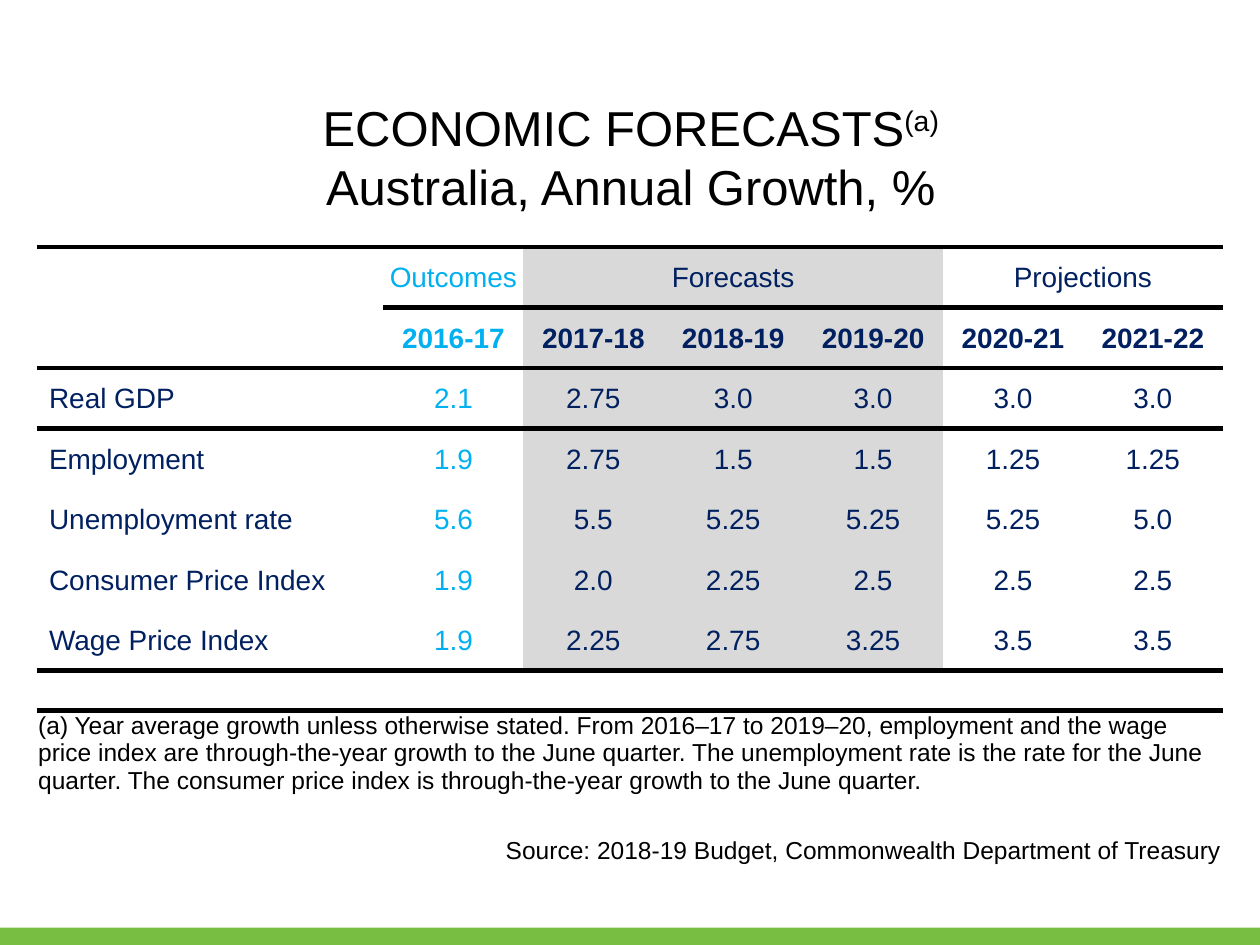
from dataclasses import dataclass

from lxml import etree
from pptx import Presentation
from pptx import util as u
from pptx.dml.color import RGBColor
from pptx.enum import shapes, text
from pptx.oxml import ns

BLACK = RGBColor(0x00, 0x00, 0x00)
WHITE = RGBColor(0xFF, 0xFF, 0xFF)
NAVY = RGBColor(0x00, 0x20, 0x60)
SKY = RGBColor(0x00, 0xB0, 0xF0)
GREY = RGBColor(0xD9, 0xD9, 0xD9)
GREEN = RGBColor(0x77, 0xBE, 0x43)

LEFT, CENTER, RIGHT = text.PP_ALIGN.LEFT, text.PP_ALIGN.CENTER, text.PP_ALIGN.RIGHT
TOP, MIDDLE, BOTTOM = (text.MSO_ANCHOR.TOP, text.MSO_ANCHOR.MIDDLE,
                       text.MSO_ANCHOR.BOTTOM)
PLAIN_STYLE = "{2D5ABB26-0587-4C30-8999-92F81FD0307C}"


@dataclass
class Group:
    """A run of year columns under one heading."""
    name: str
    years: list[str]
    color: RGBColor
    fill: RGBColor


@dataclass
class Series:
    name: str
    values: list[str]


GROUPS = [
    Group("Outcomes", ["2016-17"], SKY, WHITE),
    Group("Forecasts", ["2017-18", "2018-19", "2019-20"], NAVY, GREY),
    Group("Projections", ["2020-21", "2021-22"], NAVY, WHITE),
]
SERIES = [
    Series("Real GDP", ["2.1", "2.75", "3.0", "3.0", "3.0", "3.0"]),
    Series("Employment", ["1.9", "2.75", "1.5", "1.5", "1.25", "1.25"]),
    Series("Unemployment rate", ["5.6", "5.5", "5.25", "5.25", "5.25", "5.0"]),
    Series("Consumer Price Index", ["1.9", "2.0", "2.25", "2.5", "2.5", "2.5"]),
    Series("Wage Price Index", ["1.9", "2.25", "2.75", "3.25", "3.5", "3.5"]),
]
NOTE = ("(a) Year average growth unless otherwise stated. From 2016–17 to 2019–20, "
        "employment and the wage price index are through-the-year growth to the June "
        "quarter. The unemployment rate is the rate for the June quarter. The consumer "
        "price index is through-the-year growth to the June quarter.")
SOURCE = "Source: 2018-19 Budget, Commonwealth Department of Treasury"

HEADS = 2
GAP = HEADS + len(SERIES)
WIDTHS = [6.99] + [2.82] * 6
HEIGHTS = [1.22] * GAP + [0.74, 1.88, 1.22]


def write(para, words: str, size=16, color=NAVY, bold=False, align=CENTER, raised=False):
    """Add one formatted run to a paragraph."""
    para.alignment = align
    run = para.add_run()
    run.text = words
    font = run.font
    font.name, font.size, font.bold = "Arial", u.Pt(size), bold
    font.color.rgb = color
    if raised:
        font._element.set("baseline", "30000")


def put(cell, words: str, anchor=MIDDLE, indent=0.03, **style) -> None:
    cell.margin_left = u.Cm(indent)
    cell.vertical_anchor = anchor
    write(cell.text_frame.paragraphs[0], words, **style)


def edge(cell, side: str) -> None:
    """Draw a black border on the top (T) or bottom (B) of a cell."""
    props = cell._tc.get_or_add_tcPr()
    line = etree.Element(ns.qn(f"a:ln{side}"), w=str(u.Pt(3)))
    fill = etree.SubElement(line, ns.qn("a:solidFill"))
    etree.SubElement(fill, ns.qn("a:srgbClr"), val=str(BLACK))
    props.insert(len(props.findall(ns.qn("a:lnT"))), line)


def rule(table, row: int, first: int = 0) -> None:
    """Draw the line above a row, from column first to the right."""
    for col in range(first, len(WIDTHS)):
        edge(table.cell(row, col), "T")
        if row:
            edge(table.cell(row - 1, col), "B")


def grid(slide):
    """Add the plain table with its sizes, margins and fills."""
    frame = slide.shapes.add_table(len(HEIGHTS), len(WIDTHS), u.Cm(0.74), u.Cm(4.98),
                                   u.Cm(sum(WIDTHS)), u.Cm(sum(HEIGHTS)))
    table = frame.table
    table.first_row = table.horz_banding = False
    table._tbl.tblPr.find(ns.qn("a:tableStyleId")).text = PLAIN_STYLE
    for col, width in zip(table.columns, WIDTHS):
        col.width = u.Cm(width)
    for row, height in zip(table.rows, HEIGHTS):
        row.height = u.Cm(height)
    for cell in table.iter_cells():
        cell.margin_left = cell.margin_right = cell.margin_top = u.Cm(0.03)
        cell.margin_bottom = 0
        cell.fill.solid()
        cell.fill.fore_color.rgb = WHITE
    for cell in table.rows[GAP].cells:
        cell.fill.background()
    return table


def fill_in(table) -> None:
    # Group headings, years and values
    col = 1
    for group in GROUPS:
        last = col + len(group.years) - 1
        head = table.cell(0, col)
        if last > col:
            head.merge(table.cell(0, last))
        put(head, group.name, color=group.color)
        for year in group.years:
            put(table.cell(1, col), year, color=group.color, bold=True)
            for row, series in enumerate(SERIES, HEADS):
                put(table.cell(row, col), series.values[col - 1], color=group.color)
            for row in range(GAP):
                table.cell(row, col).fill.fore_color.rgb = group.fill
            col += 1

    # Row names
    for row, series in enumerate(SERIES, HEADS):
        put(table.cell(row, 0), series.name, indent=0.25, align=LEFT)

    # Note and source
    end = len(WIDTHS) - 1
    note, source = table.cell(GAP + 1, 0), table.cell(GAP + 2, 1)
    note.merge(table.cell(GAP + 1, end))
    source.merge(table.cell(GAP + 2, end))
    put(note, NOTE, anchor=TOP, size=14, color=BLACK, align=LEFT)
    put(source, SOURCE, anchor=BOTTOM, size=14, color=BLACK, align=RIGHT)

    # Lines
    for row, first in ((0, 0), (1, 1), (HEADS, 0), (GAP, 0)):
        rule(table, row, first)


def head(slide) -> None:
    title = slide.shapes.title
    title.left, title.top = u.Cm(0.74), u.Cm(1.88)
    title.width, title.height = u.Cm(23.95), u.Cm(2.54)
    frame = title.text_frame
    frame.auto_size = text.MSO_AUTO_SIZE.NONE
    frame.vertical_anchor = MIDDLE
    para = frame.paragraphs[0]
    write(para, "ECONOMIC FORECASTS", size=28, color=BLACK)
    write(para, "(a)", size=28, color=BLACK, raised=True)
    para.add_line_break()
    write(para, "Australia, Annual Growth, %", size=28, color=BLACK)


def band(slide) -> None:
    bar = slide.shapes.add_shape(shapes.MSO_SHAPE.RECTANGLE, 0, u.Cm(18.7),
                                 u.Cm(25.4), u.Cm(0.35))
    bar.shadow.inherit = False
    bar.fill.solid()
    bar.fill.fore_color.rgb = GREEN
    bar.line.fill.background()


def main() -> None:
    deck = Presentation()
    deck.slide_width, deck.slide_height = u.Cm(25.4), u.Cm(19.05)
    slide = deck.slides.add_slide(deck.slide_layouts[5])
    band(slide)
    fill_in(grid(slide))
    head(slide)
    deck.save("out.pptx")


if __name__ == "__main__":
    main()
